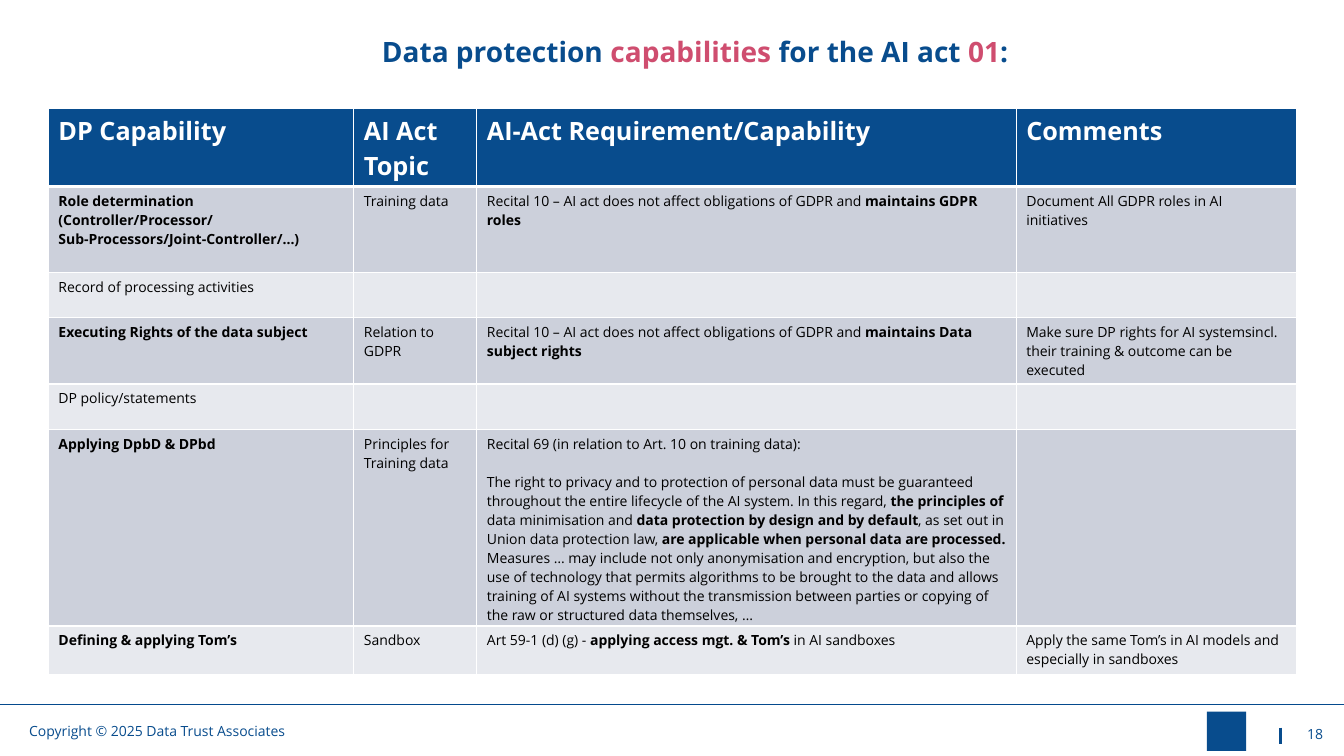
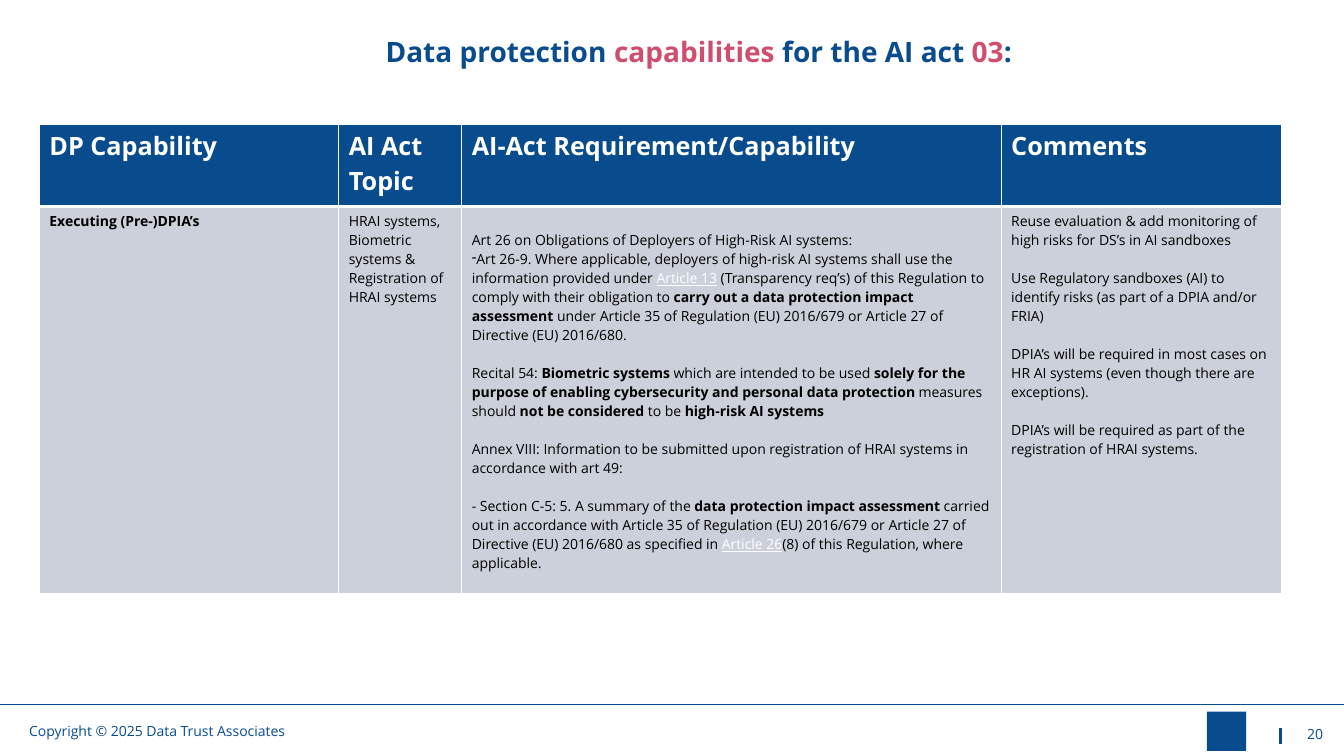
"""Build two slides that map data protection capabilities to the AI act."""
import pptx
import pptx.util
import pptx.dml.color
import pptx.enum.shapes
import pptx.enum.text
import pptx.oxml.ns
from lxml import etree

Inches = pptx.util.Inches
Pt = pptx.util.Pt
RGB = pptx.dml.color.RGBColor
Align = pptx.enum.text.PP_ALIGN
qn = pptx.oxml.ns.qn

FONT = "Open Sans"
BLUE = RGB(0x08, 0x4C, 0x8D)
RULE = RGB(0x05, 0x4A, 0x8D)
PINK = RGB(0xCF, 0x4D, 0x6F)
WHITE = RGB(0xFF, 0xFF, 0xFF)
BLACK = RGB(0, 0, 0)
DARK = RGB(0xCC, 0xD0, 0xDB)
PALE = RGB(0xE7, 0xE9, 0xEE)

WIDE, HIGH = 13.33, 7.5
LINE = 13.6
COPY = "Copyright © 2025 Data Trust Associates"
HEAD = ("DP Capability", "AI Act Topic", "AI-Act Requirement/Capability", "Comments")

ROLES = [
    (["*Role determination\v(Controller/Processor/\vSub-Processors/Joint-Controller/…)*"],
     ["Training data"],
     ["Recital 10 – AI act does not affect obligations of GDPR and *maintains GDPR roles*"],
     ["Document All GDPR roles in AI initiatives"]),
    (["Record of processing activities"], [], [], []),
    (["*Executing Rights of the data subject*"],
     ["Relation to GDPR"],
     ["Recital 10 – AI act does not affect obligations of GDPR and "
      "*maintains Data subject rights*"],
     ["Make sure DP rights for AI systemsincl. their training & outcome can be executed"]),
    (["DP policy/statements"], [], [], []),
    (["*Applying DpbD & DPbd*"],
     ["Principles for Training data"],
     ["Recital 69 (in relation to Art. 10 on training data):",
      "",
      "The right to privacy and to protection of personal data must be guaranteed "
      "throughout the entire lifecycle of the AI system. In this regard, "
      "*the principles of *data minimisation and "
      "*data protection by design and by default*, as set out in Union data "
      "protection law, *are applicable when personal data are processed. *"
      "Measures … may include not only anonymisation and encryption, but also the use "
      "of technology that permits algorithms to be brought to the data and allows "
      "training of AI systems without the transmission between parties or copying of "
      "the raw or structured data themselves, …"],
     []),
    (["*Defining & applying Tom’s*"],
     ["Sandbox"],
     ["Art 59-1 (d) (g) - *applying access mgt. & Tom’s *in AI sandboxes"],
     ["Apply the same Tom’s in AI models and especially in sandboxes"]),
]

CHECKS = [
    (["*Executing (Pre-)DPIA’s*"],
     ["HRAI systems, Biometric systems & Registration of HRAI systems"],
     ["",
      "Art 26 on Obligations of Deployers of High-Risk AI systems:",
      "•Art 26-9. Where applicable, deployers of high-risk AI systems shall use the "
      "information provided under ~Article 13~ (Transparency req’s) of this Regulation "
      "to comply with their obligation to *carry out a data protection impact "
      "assessment *under Article 35 of Regulation (EU) 2016/679 or Article 27 of "
      "Directive (EU) 2016/680.",
      "",
      "Recital 54: *Biometric systems *which are intended to be used *solely for the "
      "purpose of enabling cybersecurity and personal data protection *measures should "
      "*not be considered *to be *high-risk AI systems*",
      "",
      "Annex VIII: Information to be submitted upon registration of HRAI systems in "
      "accordance with art 49:",
      "",
      "- Section C-5: 5. A summary of the *data protection impact assessment *carried "
      "out in accordance with Article 35 of Regulation (EU) 2016/679 or Article 27 of "
      "Directive (EU) 2016/680 as specified in ~Article 26~(8) of this Regulation, "
      "where applicable."],
     ["Reuse evaluation & add monitoring of high risks for DS’s in AI sandboxes",
      "",
      "Use Regulatory sandboxes (AI) to identify risks (as part of a DPIA and/or FRIA)",
      "",
      "DPIA’s will be required in most cases on HR AI systems (even though there are "
      "exceptions).",
      "",
      "DPIA’s will be required as part of the registration of HRAI systems."]),
]

SLIDES = [
    dict(page="18", title="Data protection *capabilities *for the AI act *01*: ",
         spot=(0.48, 1.08), cols=(3.03, 1.22, 5.35, 2.78),
         rows=(0.77, 0.85, 0.45, 0.66, 0.45, 1.95, 0.48), body=ROLES),
    dict(page="20", title="Data protection *capabilities *for the AI act *03*:",
         spot=(0.39, 1.23), cols=(2.97, 1.22, 5.35, 2.78),
         rows=(0.82, 3.84), body=CHECKS),
]


def add_run(para, text, size, color, bold=False, link=False):
    run = para.add_run()
    run.text = text
    font = run.font
    font.name, font.size, font.bold = FONT, Pt(size), bold
    font.color.rgb = color
    if link:
        font.underline = True


def add_box(slide, text, spot, size, align=Align.LEFT, bold=False, mark=BLUE):
    box = slide.shapes.add_textbox(*map(Inches, spot))
    frame = box.text_frame
    frame.word_wrap = True
    para = frame.paragraphs[0]
    para.alignment = align
    for i, part in enumerate(text.split("*")):
        if part:
            add_run(para, part, size, mark if i % 2 else BLUE, bold)
    return frame


def add_line(slide, ends, color, width):
    kind = pptx.enum.shapes.MSO_CONNECTOR.STRAIGHT
    line = slide.shapes.add_connector(kind, *map(Inches, ends))
    line.line.color.rgb, line.line.width = color, Pt(width)
    etree.SubElement(line._element.spPr, qn("a:effectLst"))


def add_frame(slide, title, page):
    add_line(slide, (12.7, 7.22, 12.7, 7.38), BLUE, 1.5)
    add_line(slide, (0, 6.99, WIDE, 6.99), RULE, 1)
    add_box(slide, COPY, (0.19, 7.12, 3.59, 0.27), 10)
    kind = pptx.enum.shapes.MSO_SHAPE.RECTANGLE
    mark = slide.shapes.add_shape(kind, *map(Inches, (11.97, 7.06, 0.39, 0.39)))
    mark.shadow.inherit = False
    mark.fill.solid()
    mark.fill.fore_color.rgb = BLUE
    mark.line.fill.background()
    num = add_box(slide, page, (12.63, 7.08, 0.59, 0.4), 10, Align.RIGHT)
    num.vertical_anchor = pptx.enum.text.MSO_ANCHOR.MIDDLE
    add_box(slide, title, (3.28, 0.29, 7.3, 0.44), 20, Align.CENTER, True, PINK)


def add_edges(cell, row):
    props = cell._tc.get_or_add_tcPr()
    thick = {0: "B", 1: "T"}.get(row)
    for i, side in enumerate("LRTB"):
        edge = etree.Element(qn("a:ln" + side), w=str(Pt(3 if side == thick else 1)))
        fill = etree.SubElement(edge, qn("a:solidFill"))
        etree.SubElement(fill, qn("a:srgbClr"), val=str(WHITE))
        props.insert(i, edge)


def fill_para(para, text):
    if text.startswith("•"):
        props = para._p.get_or_add_pPr()
        props.set("marL", "0")
        props.set("indent", "0")
        etree.SubElement(props, qn("a:buChar"), char="-")
        text = text[1:]
    for i, part in enumerate(text.split("*")):
        for j, piece in enumerate(part.split("~")):
            for k, bit in enumerate(piece.split("\v")):
                if k:
                    para.add_line_break()
                if bit:
                    add_run(para, bit, 10, WHITE if j % 2 else BLACK, i % 2 == 1, j % 2 == 1)


def fill_cell(cell, lines):
    frame = cell.text_frame
    if lines and not lines[0]:
        cell.margin_top = Inches(0.05) + Pt(LINE)
        lines = lines[1:]
    gap = False
    for i, line in enumerate(lines):
        if line:
            para = frame.add_paragraph() if i else frame.paragraphs[0]
            if gap:
                para.space_before = Pt(LINE)
            fill_para(para, line)
        gap = not line


def add_grid(slide, spot, cols, rows, body):
    size = (sum(cols), sum(rows))
    grid = slide.shapes.add_table(len(rows), len(cols), *map(Inches, spot + size)).table
    grid.first_row = grid.horz_banding = False
    for col, width in zip(grid.columns, cols):
        col.width = Inches(width)
    for r, (height, texts) in enumerate(zip(rows, [HEAD] + body)):
        grid.rows[r].height = Inches(height)
        for c, text in enumerate(texts):
            cell = grid.cell(r, c)
            cell.margin_bottom = 0
            cell.fill.solid()
            cell.fill.fore_color.rgb = BLUE if r == 0 else DARK if r % 2 else PALE
            add_edges(cell, r)
            if r:
                fill_cell(cell, text)
            else:
                add_run(cell.text_frame.paragraphs[0], text, 18, WHITE, True)


def main():
    deck = pptx.Presentation()
    deck.slide_width, deck.slide_height = Inches(WIDE), Inches(HIGH)
    for item in SLIDES:
        slide = deck.slides.add_slide(deck.slide_layouts[6])
        add_frame(slide, item["title"], item["page"])
        add_grid(slide, item["spot"], item["cols"], item["rows"], item["body"])
    deck.save("out.pptx")


if __name__ == "__main__":
    main()
